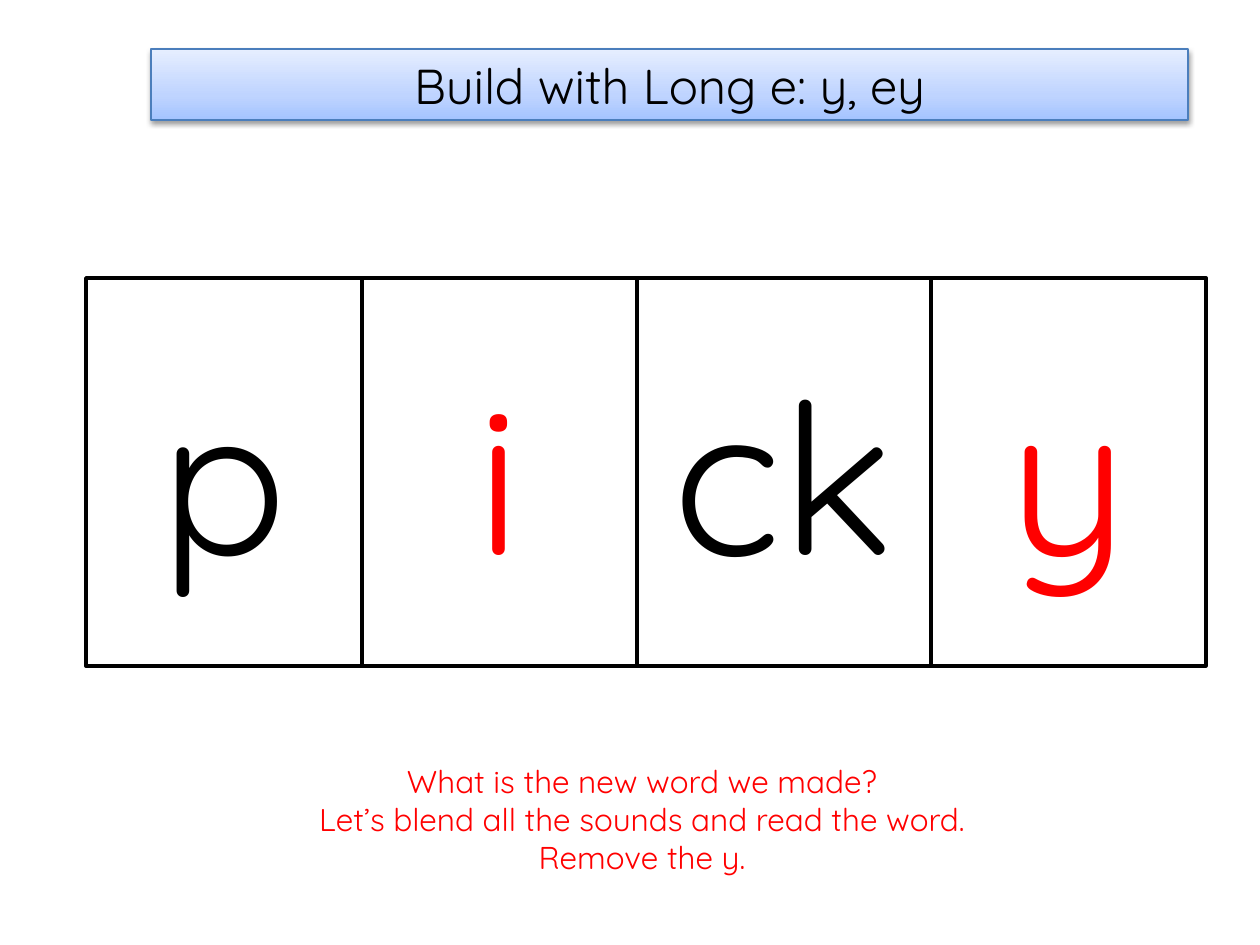
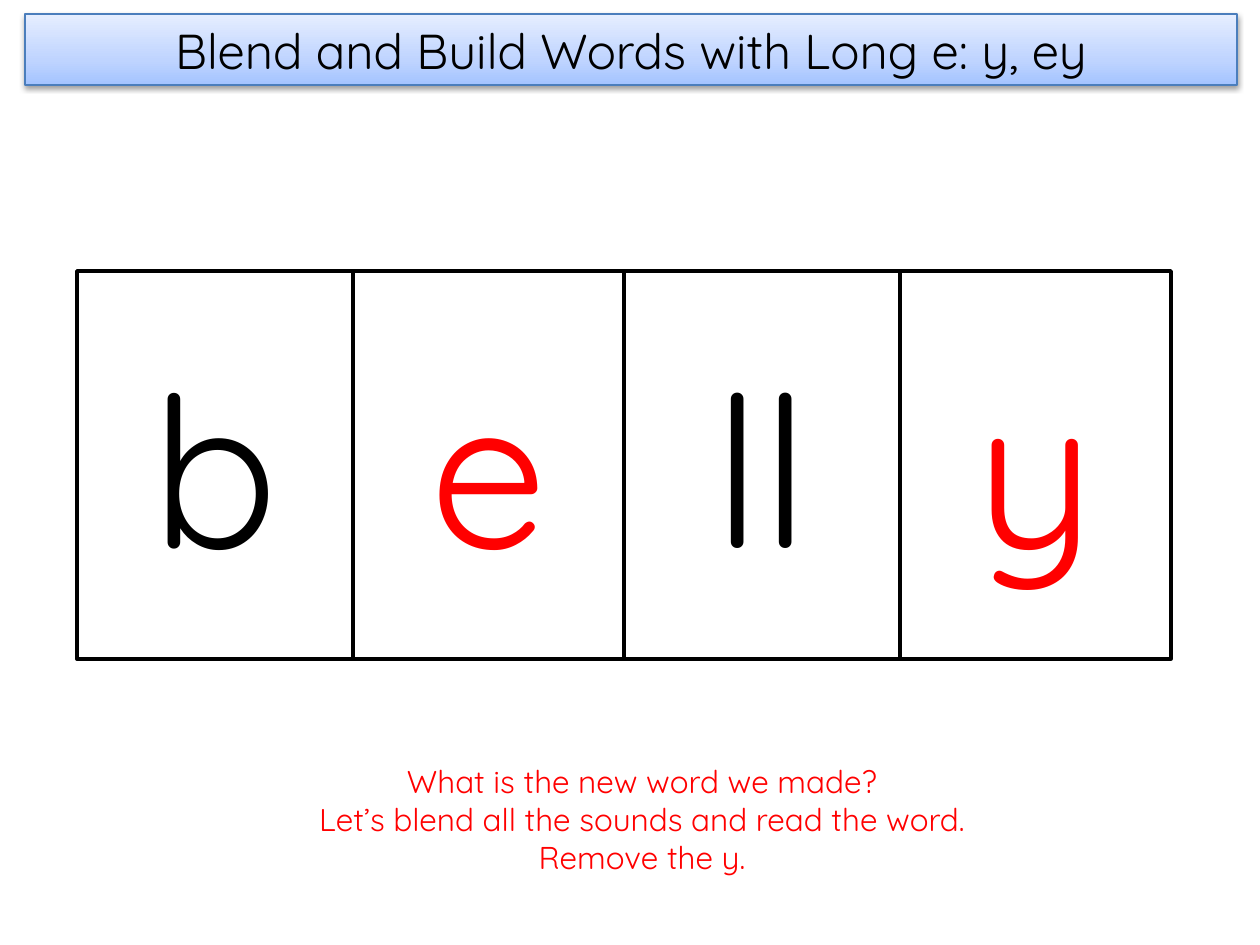
from dataclasses import dataclass

from lxml.etree import SubElement
from pptx import Presentation
from pptx.dml.color import RGBColor
from pptx.enum.shapes import MSO_SHAPE
from pptx.enum.text import MSO_ANCHOR, MSO_AUTO_SIZE, PP_ALIGN
from pptx.oxml.ns import qn
from pptx.util import Pt

PX = 914400 / 126
WIDTH, HEIGHT = 1260, 945


@dataclass(frozen=True)
class Theme:
    font: str = "Quicksand"
    ink: str = "000000"
    accent: str = "FF0000"
    paper: str = "FFFFFF"
    edge: str = "4B7EBC"
    fade: tuple = ((0, "A4C4FF"), (35, "BFD4FF"), (100, "E6EEFF"))
    title: int = 28
    letter: int = 120
    prompt: int = 18


THEME = Theme()
VOWELS = {"i", "e", "y"}
PROMPT = [
    "What is the new word we made?",
    "Let’s blend all the sounds and read the word.",
    "Remove the y.",
]
PROMPT_BOX = (203, 756, 878, 127)
CARD_HEIGHT = 388
SLIDES = [
    {
        "title": "Build with Long e: y, ey",
        "band": (151, 49, 1037, 71),
        "start": (86, 278),
        "cards": [("p", 276), ("i", 275), ("ck", 294), ("y", 275)],
    },
    {
        "title": "Blend and Build Words with Long e: y, ey",
        "band": (25, 14, 1212, 71),
        "start": (77, 271),
        "cards": [("b", 276), ("e", 271), ("ll", 276), ("y", 271)],
    },
]


def emu(*sizes):
    return [round(size * PX) for size in sizes]


def color(code):
    return RGBColor.from_string(code)


def write(frame, lines, size, shade):
    frame.word_wrap = True
    for i, line in enumerate(lines):
        para = frame.add_paragraph() if i else frame.paragraphs[0]
        para.alignment = PP_ALIGN.CENTER
        run = para.add_run()
        run.text = line
        run.font.name = THEME.font
        run.font.size = Pt(size)
        run.font.color.rgb = color(shade)


def add_box(slide, box, text, size, shade, edge, weight):
    shape = slide.shapes.add_shape(MSO_SHAPE.RECTANGLE, *emu(*box))
    shape.shadow.inherit = False
    shape.fill.solid()
    shape.fill.fore_color.rgb = color(THEME.paper)
    shape.line.color.rgb = color(edge)
    shape.line.width = Pt(weight)
    shape.text_frame.vertical_anchor = MSO_ANCHOR.MIDDLE
    write(shape.text_frame, [text], size, shade)
    return shape


def add_fade(shape):
    """Fill the shape with the theme's stops, from bottom to top."""
    shape.fill.gradient()
    shape.fill.gradient_angle = 90
    stops = shape.element.find(".//" + qn("a:gsLst"))
    for stop in list(stops):
        stops.remove(stop)
    for place, code in THEME.fade:
        stop = SubElement(stops, qn("a:gs"), pos=str(place * 1000))
        SubElement(stop, qn("a:srgbClr"), val=code)


def add_shadow(shape):
    effects = shape.element.find(".//" + qn("a:effectLst"))
    shadow = SubElement(effects, qn("a:outerShdw"), blurRad="40000",
                        dist="20000", dir="5400000", rotWithShape="0")
    tint = SubElement(shadow, qn("a:srgbClr"), val=THEME.ink)
    SubElement(tint, qn("a:alpha"), val="38000")


def add_title(slide, text, box):
    band = add_box(slide, box, text, THEME.title, THEME.ink, THEME.edge, 0.75)
    add_fade(band)
    add_shadow(band)


def add_cards(slide, cards, start):
    left, top = start
    for sound, width in cards:
        shade = THEME.accent if sound in VOWELS else THEME.ink
        add_box(slide, (left, top, width, CARD_HEIGHT), sound,
                THEME.letter, shade, THEME.ink, 2)
        left += width


def add_prompt(slide):
    frame = slide.shapes.add_textbox(*emu(*PROMPT_BOX)).text_frame
    write(frame, PROMPT, THEME.prompt, THEME.accent)
    frame.auto_size = MSO_AUTO_SIZE.SHAPE_TO_FIT_TEXT


def main():
    deck = Presentation()
    deck.slide_width, deck.slide_height = emu(WIDTH, HEIGHT)
    for page in SLIDES:
        slide = deck.slides.add_slide(deck.slide_layouts[6])
        add_title(slide, page["title"], page["band"])
        add_cards(slide, page["cards"], page["start"])
        add_prompt(slide)
    deck.save("out.pptx")


if __name__ == "__main__":
    main()
